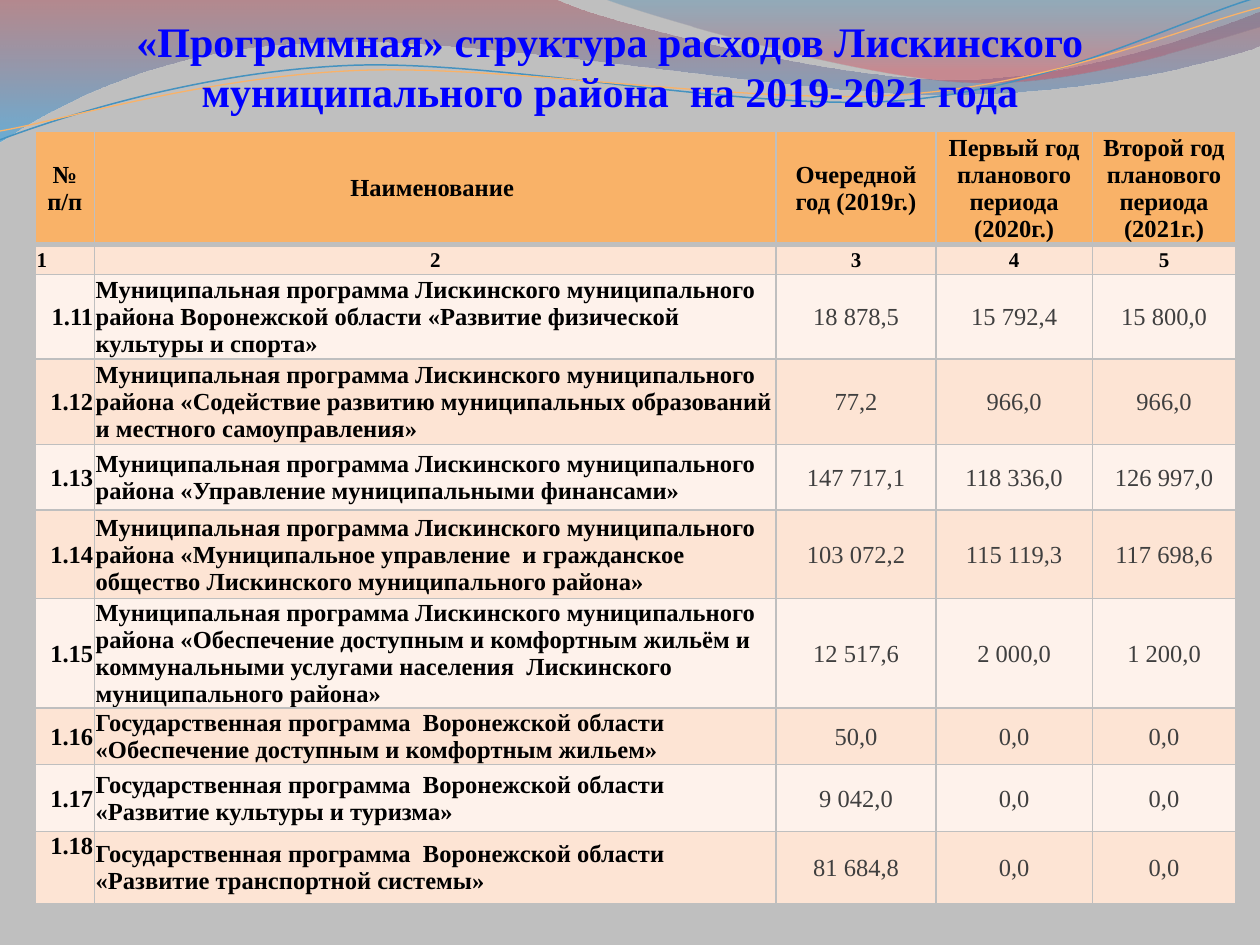
from lxml.etree import SubElement
from pptx import Presentation
from pptx.dml.color import RGBColor
from pptx.enum.text import MSO_ANCHOR, PP_ALIGN
from pptx.oxml import parse_xml
from pptx.oxml.ns import nsdecls, qn
from pptx.util import Inches, Pt

FONT = "Times New Roman"
GREY = RGBColor(0xBF, 0xBF, 0xBF)
BLUE = RGBColor(0x00, 0x00, 0xFF)
BLACK = RGBColor(0x00, 0x00, 0x00)
DARK = RGBColor(0x3F, 0x3F, 0x3F)
ORANGE = RGBColor(0xF9, 0xB2, 0x68)
PEACH = RGBColor(0xFD, 0xE4, 0xD4)
CREAM = RGBColor(0xFE, 0xF2, 0xEB)
SKY = RGBColor(0x45, 0x92, 0xBF)
RED = RGBColor(0xA8, 0x47, 0x52)
AZURE = RGBColor(0x24, 0x9F, 0xE6)
TEAL = RGBColor(0x2A, 0x7E, 0xAF)
CORAL = RGBColor(0xD2, 0x4B, 0x5A)

# Content
TITLE = "«Программная» структура расходов Лискинского муниципального района  на 2019-2021 года"
HEADER = ("№ п/п", "Наименование ", "Очередной год (2019г.)",
          "Первый год планового периода (2020г.)", "Второй год планового периода (2021г.)")
LOCAL = "Муниципальная программа Лискинского муниципального района "
STATE = "Государственная программа  Воронежской области "
PROGRAMS = [
    (LOCAL + "Воронежской области «Развитие физической культуры и спорта»",
     "18 878,5", "15 792,4", "15 800,0"),
    (LOCAL + "«Содействие развитию муниципальных образований и местного самоуправления»",
     "77,2", "966,0", "966,0"),
    (LOCAL + "«Управление муниципальными финансами»", "147 717,1", "118 336,0", "126 997,0"),
    (LOCAL + "«Муниципальное управление  и гражданское общество Лискинского муниципального района»",
     "103 072,2", "115 119,3", "117 698,6"),
    (LOCAL + "«Обеспечение доступным и комфортным жильём и коммунальными услугами населения  "
     "Лискинского муниципального района»", "12 517,6", "2 000,0", "1 200,0"),
    (STATE + "«Обеспечение доступным и комфортным жильем»", "50,0", "0,0", "0,0"),
    (STATE + "«Развитие культуры и туризма»", "9 042,0", "0,0", "0,0"),
    (STATE + "«Развитие транспортной системы»", "81 684,8", "0,0", "0,0"),
]
ROWS = [HEADER, ("1", "2", "3", "4", "5")]
ROWS += [(f"1.{n}", *program) for n, program in enumerate(PROGRAMS, 11)]
COL_W = (0.47, 5.41, 1.27, 1.24, 1.14)
ROW_H = (0.9, 0.24, 0.67, 0.68, 0.52, 0.7, 0.86, 0.45, 0.53, 0.57)

# Waves in inches: a pair is a straight step, six numbers are a Bezier step
BANDS = [
    ([(0, 0), (4.4, -0.01), (4.76, 0.17, 6.64, 0.63, 7.58, 0.63),
      (8.53, 0.63, 9.58, 0.26, 10, 0.09), (10.01, 0.36),
      (9.83, 0.44, 8.7, 0.76, 7.46, 0.75), (6.22, 0.75, 3.82, 0.28, 2.57, 0.34),
      (1.29, 0.36, 0.46, 0.83, -0.01, 1.13)],
     [(0, RED, 45), (100, AZURE, 55)]),
    ([(4.79, -0.01), (5.09, 0.11, 6.82, 0.62, 7.69, 0.65),
      (8.56, 0.69, 9.61, 0.32, 10, 0.21), (10, 0)],
     [(0, TEAL, 30), (80, CORAL, 45)]),
]
CURVES = [
    ([(0, 1.11), (0.48, 0.93, 1.58, 0.57, 2.77, 0.52), (3.95, 0.47, 5.93, 0.89, 7.13, 0.8),
      (8.33, 0.71, 9.38, 0.15, 9.98, -0.02)], SKY, 0.85),
    ([(0, 1.04), (0.47, 0.96, 1.64, 0.61, 2.83, 0.56), (4.03, 0.51, 5.97, 0.84, 7.17, 0.75),
      (8.36, 0.67, 9.41, 0.21, 10, 0.06)], ORANGE, 0.75),
]


def add_wave(s, steps, close):
    # Lay out every point as a line, then join each Bezier step's three points
    pts = [(Inches(x), Inches(y)) for step in steps for x, y in zip(step[::2], step[1::2])]
    fb = s.shapes.build_freeform(*pts[0])
    fb.add_line_segments(pts[1:], close=close)
    sp = fb.convert_to_shape()
    sp.shadow.inherit = False
    lines = iter(list(sp.element.iter(qn("a:lnTo"))))
    for step in steps[1:]:
        line = next(lines)
        if len(step) == 6:
            line.tag = qn("a:cubicBezTo")
            for _ in range(2):
                extra = next(lines)
                line.append(extra[0])
                extra.getparent().remove(extra)
    return sp


def set_gradient(sp, stops):
    gs = "".join(f'<a:gs pos="{pos * 1000}"><a:srgbClr val="{color}">'
                 f'<a:alpha val="{alpha * 1000}"/></a:srgbClr></a:gs>'
                 for pos, color, alpha in stops)
    grad = parse_xml(f'<a:gradFill {nsdecls("a")}><a:gsLst>{gs}</a:gsLst>'
                     '<a:lin ang="5400000" scaled="0"/></a:gradFill>')
    sp.element.spPr.find(qn("a:custGeom")).addnext(grad)


def set_borders(cell, bottom):
    tcPr = cell._tc.get_or_add_tcPr()
    for side, width in (("L", 1), ("R", 1), ("T", 1), ("B", bottom)):
        ln = SubElement(tcPr, qn(f"a:ln{side}"), w=str(Pt(width)))
        SubElement(SubElement(ln, qn("a:solidFill")), qn("a:srgbClr"), val=str(GREY))


def add_run(p, text, size, color, bold):
    r = p.add_run()
    r.text = text
    f = r.font
    f.name, f.size, f.bold = FONT, Pt(size), bold
    f.color.rgb = color


def fill_cell(cell, text, row, col):
    # Borders go before the fill in the cell properties
    set_borders(cell, 3 if row == 0 else 1)
    cell.fill.solid()
    cell.fill.fore_color.rgb = ORANGE if row == 0 else PEACH if row % 2 else CREAM
    cell.margin_left = cell.margin_right = cell.margin_top = Inches(0.01)
    cell.margin_bottom = 0
    last_number = row == len(ROWS) - 1 and col == 0
    cell.vertical_anchor = MSO_ANCHOR.TOP if last_number else MSO_ANCHOR.MIDDLE
    p = cell.text_frame.paragraphs[0]
    p.alignment = PP_ALIGN.CENTER
    if row > 1 and col == 0:
        p.alignment = PP_ALIGN.RIGHT
    elif (row > 1 and col == 1) or (row == 1 and col == 0):
        p.alignment = PP_ALIGN.LEFT
    value = row > 1 and col > 1
    add_run(p, text, 12 if row == 1 else 14, DARK if value else BLACK, not value)


prs = Presentation()
prs.slide_width, prs.slide_height = Inches(10), Inches(7.5)
s = prs.slides.add_slide(prs.slide_layouts[5])
s.background.fill.solid()
s.background.fill.fore_color.rgb = GREY

# Waves behind the title
for steps, stops in BANDS:
    sp = add_wave(s, steps, True)
    set_gradient(sp, stops)
    sp.line.fill.background()
for steps, color, width in CURVES:
    sp = add_wave(s, steps, False)
    sp.fill.background()
    sp.line.color.rgb = color
    sp.line.width = Pt(width)

# Title, brought in front of the waves
title = s.shapes.title
title.element.getparent().append(title.element)
title.left, title.top, title.width, title.height = map(Inches, (0.23, 0.13, 9.22, 0.79))
tf = title.text_frame
tf.word_wrap = True
tf.vertical_anchor = MSO_ANCHOR.BOTTOM
tf.margin_left = tf.margin_right = tf.margin_bottom = 0
tf.margin_top = Inches(0.05)
p = tf.paragraphs[0]
p.alignment = PP_ALIGN.CENTER
add_run(p, TITLE, 24, BLUE, True)

# Table
table = s.shapes.add_table(len(ROWS), len(COL_W), Inches(0.28), Inches(1.04),
                           Inches(sum(COL_W)), Inches(sum(ROW_H))).table
for column, width in zip(table.columns, COL_W):
    column.width = Inches(width)
for row, (texts, height) in enumerate(zip(ROWS, ROW_H)):
    table.rows[row].height = Inches(height)
    for col, text in enumerate(texts):
        fill_cell(table.cell(row, col), text, row, col)

prs.save("out.pptx")
